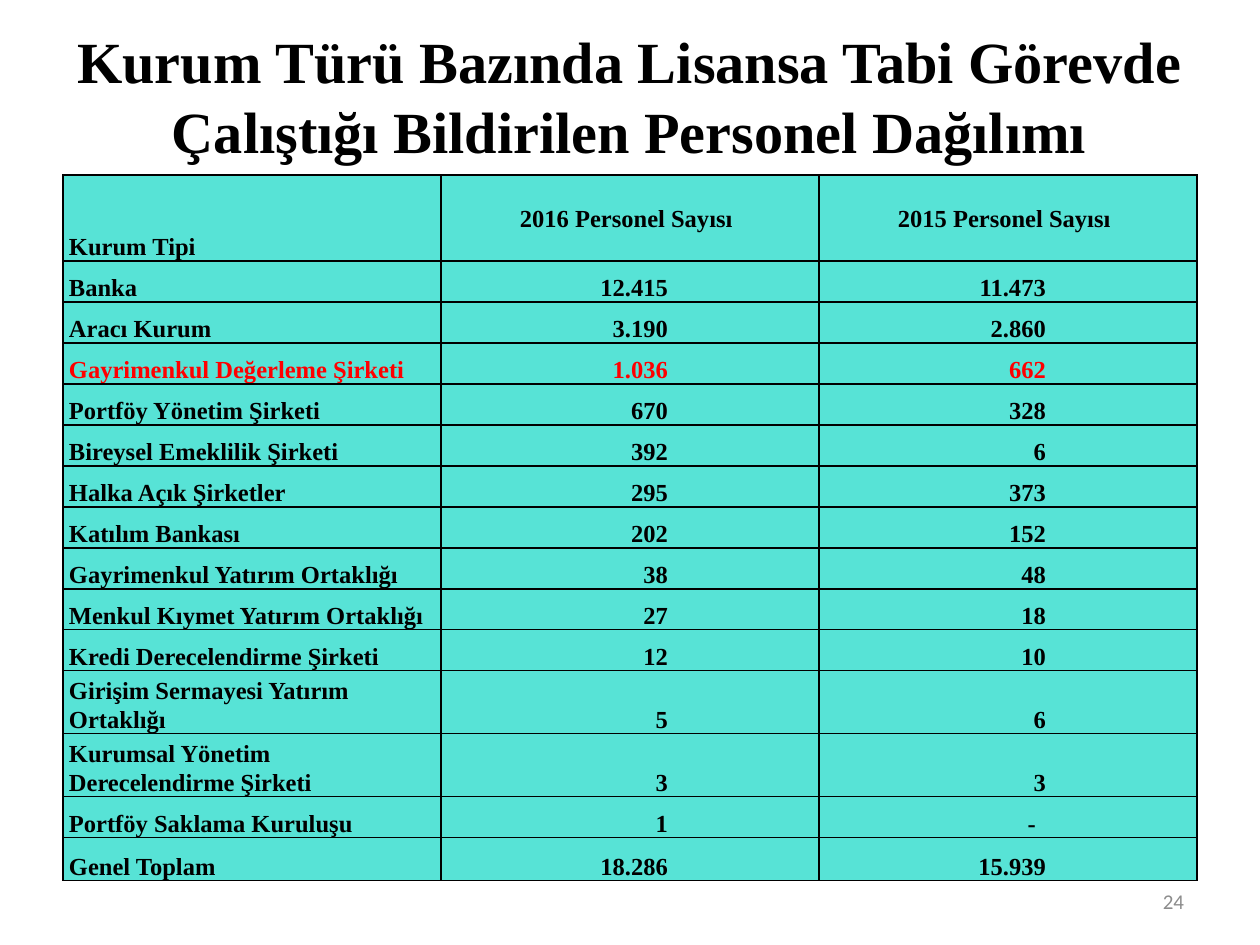
from lxml import etree
from pptx import Presentation
from pptx.dml.color import RGBColor
from pptx.enum.text import MSO_ANCHOR as Anchor, PP_ALIGN as Align
from pptx.oxml.ns import qn
from pptx.util import Pt

PX = 914400 // 126
COLORS = {"ink": "000000", "highlight": "FF0000", "cell": "57E3D6", "page": "8C8C8C"}
SERIF = "Times New Roman"


def write(frame, text, font, size, color, align, anchor, margins, bold=True):
    frame.word_wrap = True
    frame.vertical_anchor = anchor
    frame.margin_left, frame.margin_right = (m * PX for m in margins)
    frame.margin_top = frame.margin_bottom = 0
    para = frame.paragraphs[0]
    para.text = text
    para.alignment = align
    para.font.name, para.font.size, para.font.bold = font, Pt(size), bold
    para.font.color.rgb = RGBColor.from_string(COLORS[color])
    return para


def add_borders(cell):
    properties = cell._tc.get_or_add_tcPr()
    for position, side in enumerate(("a:lnL", "a:lnR", "a:lnT", "a:lnB")):
        line = etree.Element(qn(side), w=str(Pt(1)))
        fill = etree.SubElement(line, qn("a:solidFill"))
        etree.SubElement(fill, qn("a:srgbClr"), val=COLORS["ink"])
        properties.insert(position, line)


deck = Presentation()
deck.slide_width, deck.slide_height = 1260 * PX, 945 * PX
page = deck.slides.add_slide(deck.slide_layouts[6])

# Title
box = page.shapes.add_textbox(63 * PX, 25 * PX, 1134 * PX, 140 * PX)
title = write(box.text_frame,
              "Kurum Türü Bazında Lisansa Tabi Görevde Çalıştığı Bildirilen Personel Dağılımı",
              SERIF, 33.3, "ink", Align.CENTER, Anchor.MIDDLE, (0, 0))
title.line_spacing = Pt(40)

# Staff numbers by type of institution
rows = [
    ("Kurum Tipi", "2016 Personel Sayısı", "2015 Personel Sayısı"),
    ("Banka", "12.415", "11.473"),
    ("Aracı Kurum", "3.190", "2.860"),
    ("Gayrimenkul Değerleme Şirketi", "1.036", "662"),
    ("Portföy Yönetim Şirketi", "670", "328"),
    ("Bireysel Emeklilik Şirketi", "392", "6"),
    ("Halka Açık Şirketler", "295", "373"),
    ("Katılım Bankası", "202", "152"),
    ("Gayrimenkul Yatırım Ortaklığı", "38", "48"),
    ("Menkul Kıymet Yatırım Ortaklığı", "27", "18"),
    ("Kredi Derecelendirme Şirketi", "12", "10"),
    ("Girişim Sermayesi Yatırım Ortaklığı", "5", "6"),
    ("Kurumsal Yönetim Derecelendirme Şirketi", "3", "3"),
    ("Portföy Saklama Kuruluşu", "1", "-"),
    ("Genel Toplam", "18.286", "15.939"),
]
heights = [86] + [41] * 10 + [59] * 2 + [41, 43]
highlighted_row = 3

table = page.shapes.add_table(len(rows), 3, 63 * PX, 175 * PX,
                              1134 * PX, sum(heights) * PX).table
for column in table.columns:
    column.width = 378 * PX
for r, (values, height) in enumerate(zip(rows, heights)):
    table.rows[r].height = height * PX
    color = "highlight" if r == highlighted_row else "ink"
    for c, value in enumerate(values):
        cell = table.cell(r, c)
        align, anchor, right = Align.LEFT, Anchor.BOTTOM, 6
        if c and r == 0:
            align, anchor, right = Align.CENTER, Anchor.MIDDLE, 13
        elif c:
            align, right = Align.RIGHT, 161 if value == "-" else 151
        para = write(cell.text_frame, value, SERIF, 14, color, align, Anchor.TOP, (6, right))
        para.line_spacing = 1.07
        cell.vertical_anchor = anchor
        cell.margin_left, cell.margin_right = 6 * PX, right * PX
        cell.margin_top = cell.margin_bottom = 0
        cell.fill.solid()
        cell.fill.fore_color.rgb = RGBColor.from_string(COLORS["cell"])
        add_borders(cell)

# Page number
box = page.shapes.add_textbox(903 * PX, 876 * PX, 294 * PX, 50 * PX)
write(box.text_frame, "24", "Calibri", 12, "page", Align.RIGHT, Anchor.MIDDLE, (13, 13), False)

deck.save("out.pptx")
